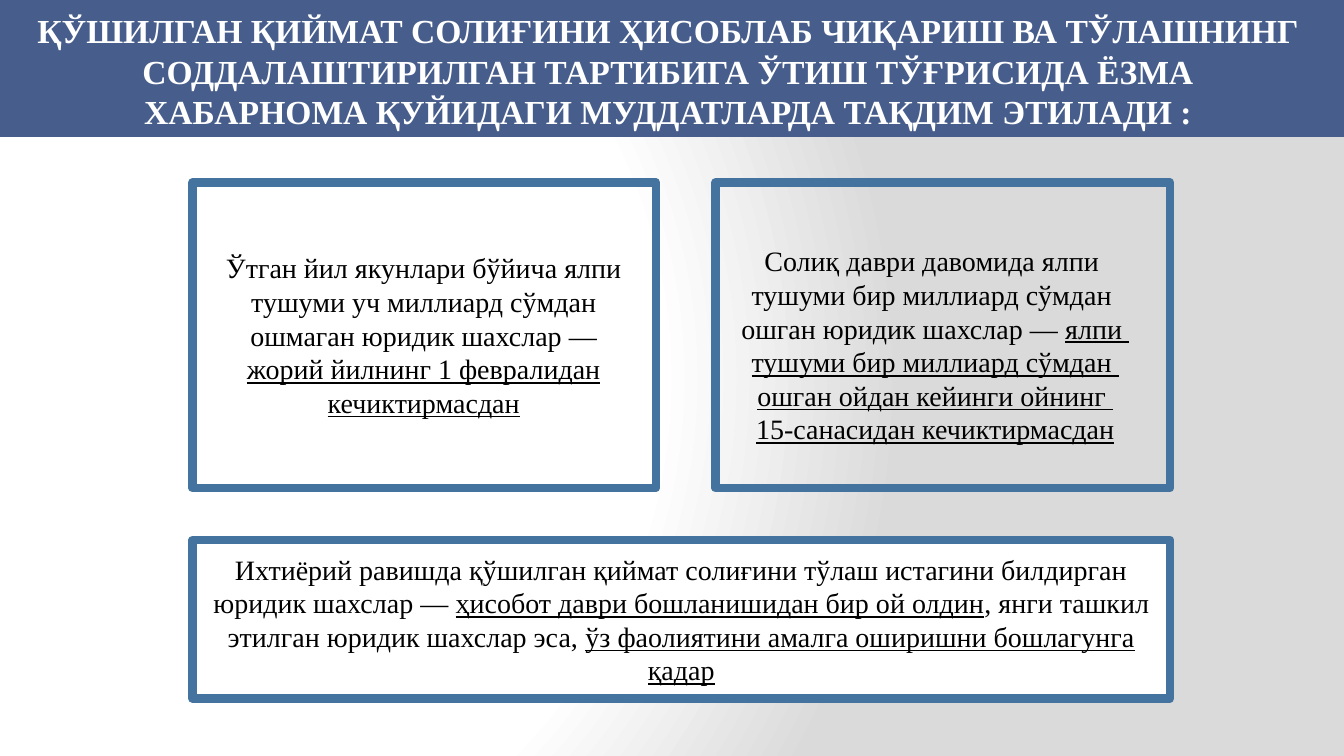
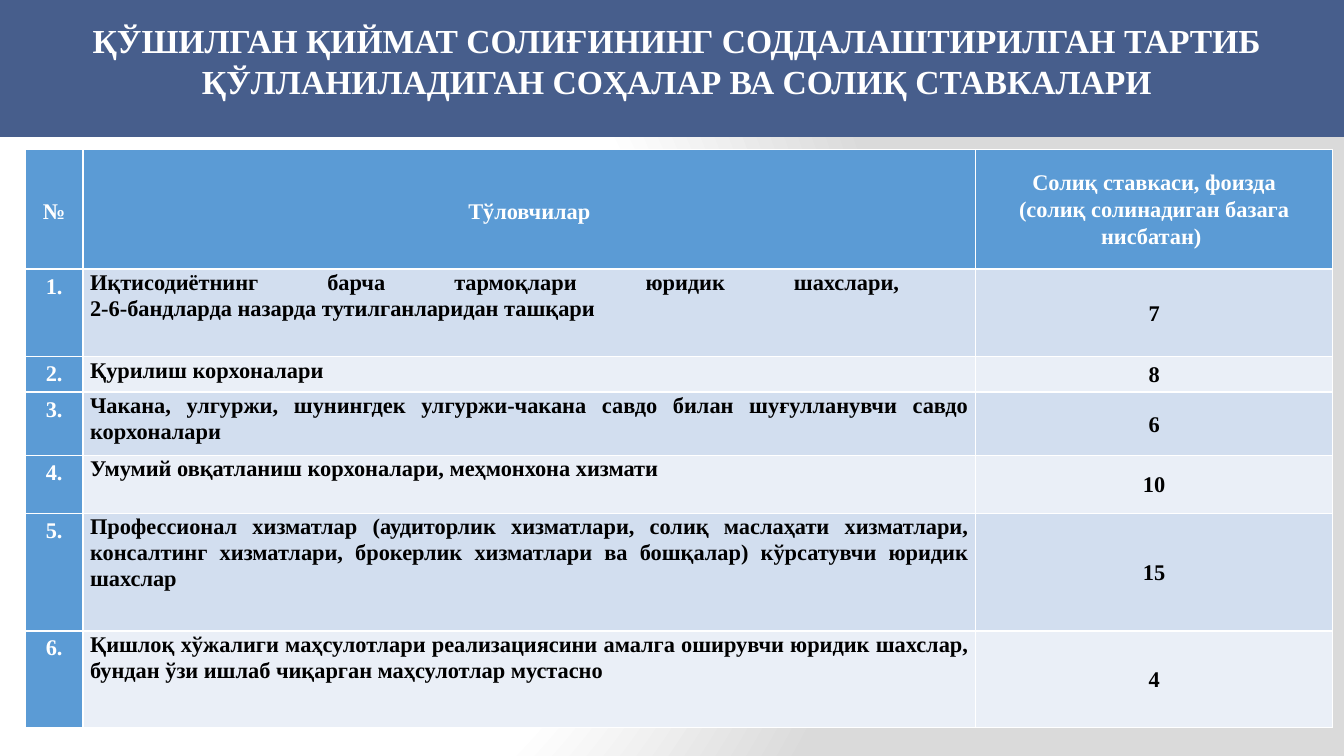
"""Build two slides on the simplified value added tax procedure."""
from pptx import Presentation
from pptx.dml.color import RGBColor
from pptx.enum.shapes import MSO_SHAPE as Shape
from pptx.enum.text import MSO_ANCHOR as Anchor, PP_ALIGN as Align
from pptx.oxml import parse_xml
from pptx.oxml.ns import nsdecls, qn
from pptx.util import Cm, Pt

FONT = "Times New Roman"
COLORS = {
    "white": "FFFFFF", "black": "000000", "grey": "DADADA", "band": "475E8C",
    "frame": "43739E", "header": "5B9BD5", "odd": "D2DEEF", "even": "EAEFF7",
}
WIDTH, HEIGHT, BAND_HEIGHT = 33.87, 19.05, 3.45

NOTICE_TITLE = (
    "ҚЎШИЛГАН ҚИЙМАТ СОЛИҒИНИ ҲИСОБЛАБ ЧИҚАРИШ ВА ТЎЛАШНИНГ "
    "СОДДАЛАШТИРИЛГАН ТАРТИБИГА ЎТИШ ТЎҒРИСИДА ЁЗМА ХАБАРНОМА "
    "ҚУЙИДАГИ МУДДАТЛАРДА ТАҚДИМ ЭТИЛАДИ :"
)
LAST_YEAR = [
    "Ўтган йил якунлари бўйича ялпи ",
    "тушуми уч миллиард сўмдан ошмаган юридик шахслар — "
    "_жорий йилнинг 1 февралидан кечиктирмасдан_",
]
THIS_PERIOD = [
    "Солиқ даври давомида ялпи ",
    "тушуми бир миллиард сўмдан ",
    "ошган юридик шахслар — _ялпи _",
    "_тушуми бир миллиард сўмдан _",
    "_ошган ойдан кейинги ойнинг _",
    "_15-санасидан кечиктирмасдан_",
]
VOLUNTARY = [
    "Ихтиёрий равишда қўшилган қиймат солиғини тўлаш истагини билдирган "
    "юридик шахслар — _ҳисобот даври бошланишидан бир ой олдин_, янги ташкил "
    "этилган юридик шахслар эса, _ўз фаолиятини амалга оширишни бошлагунга қадар_",
]

RATES_TITLE = (
    "ҚЎШИЛГАН ҚИЙМАТ СОЛИҒИНИНГ СОДДАЛАШТИРИЛГАН ТАРТИБ "
    "ҚЎЛЛАНИЛАДИГАН СОҲАЛАР ВА СОЛИҚ СТАВКАЛАРИ"
)
RATES_HEADER = [
    ["№"],
    ["Тўловчилар"],
    ["Солиқ ставкаси, фоизда", "(солиқ солинадиган базага нисбатан) "],
]
RATES = [
    ("Иқтисодиётнинг барча тармоқлари юридик шахслари, \v"
     "2-6-бандларда назарда тутилганларидан ташқари", 7),
    ("Қурилиш корхоналари", 8),
    ("Чакана, улгуржи, шунингдек улгуржи-чакана савдо билан шуғулланувчи "
     "савдо корхоналари", 6),
    ("Умумий овқатланиш корхоналари, меҳмонхона хизмати", 10),
    ("Профессионал хизматлар (аудиторлик хизматлари, солиқ маслаҳати хизматлари, "
     "консалтинг хизматлари, брокерлик хизматлари ва бошқалар) кўрсатувчи "
     "юридик шахслар", 15),
    ("Қишлоқ хўжалиги маҳсулотлари реализациясини амалга оширувчи юридик "
     "шахслар, бундан ўзи ишлаб чиқарган маҳсулотлар мустасно", 4),
]
COLUMN_WIDTHS = [1.45, 22.5, 8.99]
ROW_HEIGHTS = [3.02, 2.21, 0.89, 1.6, 1.45, 2.97, 2.44]


def rgb(name):
    return RGBColor.from_string(COLORS[name])


def write(frame, paragraphs, size, color="black", bold=False,
          align=Align.CENTER, spacing=None):
    """Fill a text frame; text between underscores is underlined."""
    for index, text in enumerate(paragraphs):
        line = frame.add_paragraph() if index else frame.paragraphs[0]
        line.alignment = align
        line.line_spacing = spacing
        line.font.name, line.font.size, line.font.bold = FONT, Pt(size), bold
        line.font.color.rgb = rgb(color)
        if "_" not in text:
            line.text = text
            continue
        for part, words in enumerate(text.split("_")):
            if words:
                run = line.add_run()
                run.text = words
                run.font.underline = part % 2 == 1


def add_box(slide, place, fill=None, line=None):
    box = slide.shapes.add_shape(Shape.RECTANGLE, *map(Cm, place))
    box.shadow.inherit = False
    if fill:
        box.fill.solid()
        box.fill.fore_color.rgb = rgb(fill)
    else:
        box.fill.background()
    if line:
        box.line.color.rgb = rgb(line)
        box.line.width = Pt(6)
    else:
        box.line.fill.background()
    return box


def add_note(slide, place, paragraphs, wrap=True):
    frame = slide.shapes.add_textbox(*map(Cm, place)).text_frame
    frame.word_wrap = wrap
    write(frame, paragraphs, 20)


def style_layout(layout, slide):
    """Give the layout its gradient background and title band."""
    layout.background.fill.solid()
    backdrop = layout.element.find(".//" + qn("p:bgPr"))
    stops = "".join(
        f'<a:gs pos="{position * 1000}"><a:srgbClr val="{COLORS[name]}"/></a:gs>'
        for position, name in [(0, "white"), (68, "white"), (100, "grey")]
    )
    backdrop.replace(backdrop[0], parse_xml(
        f'<a:gradFill {nsdecls("a")} rotWithShape="1"><a:gsLst>{stops}</a:gsLst>'
        '<a:path path="circle"><a:fillToRect l="20000" t="50000" r="100000" '
        'b="50000"/></a:path></a:gradFill>'
    ))
    band = add_box(slide, (0, 0, WIDTH, BAND_HEIGHT), fill="band")
    layout.shapes.element.insert(2, band.element)


def set_title(slide, text, place):
    title = slide.shapes.title
    title.left, title.top, title.width, title.height = map(Cm, place)
    title.text_frame.vertical_anchor = Anchor.TOP
    title.text_frame.word_wrap = True
    write(title.text_frame, [text], 24, "white", bold=True)


def add_notice(slide):
    set_title(slide, NOTICE_TITLE, (0.64, 0.13, 32.39, 3.33))
    add_box(slide, (18.03, 4.6, 11.46, 7.7), line="frame")
    add_box(slide, (4.85, 4.6, 11.68, 7.7), line="frame")
    add_note(slide, (5.41, 6.2, 10.54, 4.52), LAST_YEAR)
    add_note(slide, (18.39, 6.02, 10.36, 5.56), THIS_PERIOD, wrap=False)
    voluntary = add_box(slide, (4.85, 13.61, 24.64, 3.99), "white", "frame")
    voluntary.text_frame.vertical_anchor = Anchor.MIDDLE
    write(voluntary.text_frame, VOLUNTARY, 20)


def fill_cell(cell, paragraphs, fill, color, align, spacing, anchor):
    cell.fill.solid()
    cell.fill.fore_color.rgb = rgb(fill)
    cell.margin_left = cell.margin_right = Cm(0.18)
    cell.margin_top = cell.margin_bottom = 0
    cell.vertical_anchor = anchor
    write(cell.text_frame, paragraphs, 16, color, True, align, spacing)


def add_rates(slide):
    set_title(slide, RATES_TITLE, (1.42, 0.38, 31.27, 2.31))
    table = slide.shapes.add_table(
        len(ROW_HEIGHTS), len(COLUMN_WIDTHS), Cm(0.64), Cm(3.76),
        Cm(sum(COLUMN_WIDTHS)), Cm(sum(ROW_HEIGHTS))).table
    for column, width in zip(table.columns, COLUMN_WIDTHS):
        column.width = Cm(width)
    for row, height in zip(table.rows, ROW_HEIGHTS):
        row.height = Cm(height)
    for column, heading in enumerate(RATES_HEADER):
        fill_cell(table.cell(0, column), heading, "header", "white",
                  Align.CENTER, 1.07 if len(heading) > 1 else 1.2, Anchor.MIDDLE)
    for number, (payers, rate) in enumerate(RATES, 1):
        shade = "odd" if number % 2 else "even"
        fill_cell(table.cell(number, 0), [f"{number}."], "header", "white",
                  Align.CENTER, 1.2, Anchor.TOP)
        fill_cell(table.cell(number, 1), [payers], shade, "black",
                  Align.JUSTIFY, 1.05, Anchor.TOP)
        fill_cell(table.cell(number, 2), [str(rate)], shade, "black",
                  Align.CENTER, 1.05, Anchor.MIDDLE)


def main():
    deck = Presentation()
    deck.slide_width, deck.slide_height = Cm(WIDTH), Cm(HEIGHT)
    layout = deck.slide_layouts.get_by_name("Title Only")
    notice, rates = [deck.slides.add_slide(layout) for _ in range(2)]
    style_layout(layout, notice)
    add_notice(notice)
    add_rates(rates)
    deck.save("out.pptx")


if __name__ == "__main__":
    main()
